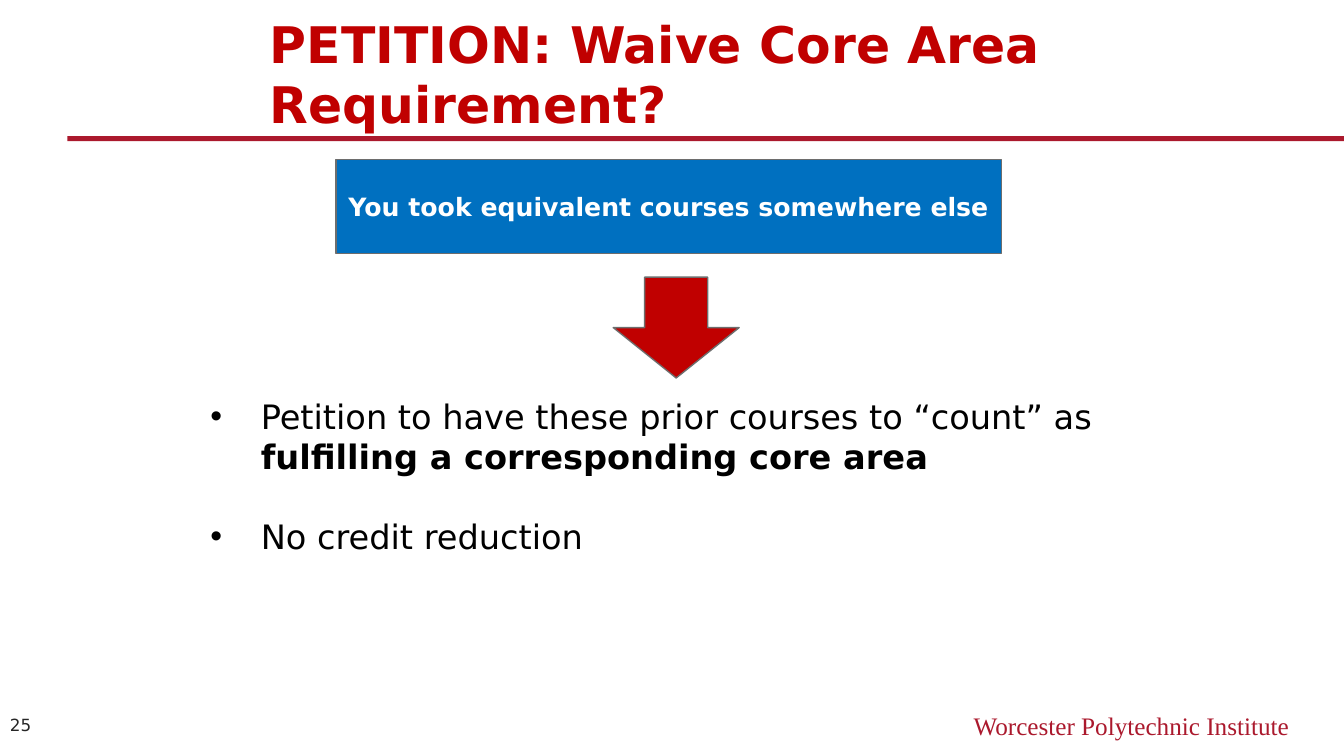
from lxml import etree
from pptx import Presentation
from pptx.dml.color import RGBColor
from pptx.enum.shapes import MSO_SHAPE
from pptx.enum.text import MSO_ANCHOR, PP_ALIGN
from pptx.oxml.ns import qn
from pptx.util import Pt

RECT, ARROW = MSO_SHAPE.RECTANGLE, MSO_SHAPE.DOWN_ARROW
TOP, MIDDLE = MSO_ANCHOR.TOP, MSO_ANCHOR.MIDDLE
LEFT, CENTER, RIGHT = PP_ALIGN.LEFT, PP_ALIGN.CENTER, PP_ALIGN.RIGHT
SANS, SERIF = "DejaVu Sans", "Times New Roman"
RED, CRIMSON, BLUE, GRAY = "C00000", "AB192D", "0070C0", "6D6D6D"
BLACK, WHITE, DARK = "000000", "FFFFFF", "262626"
POINTS = [
    [("Petition to have these prior courses to “count” as ", False),
     ("fulfilling a corresponding core area", True)],
    [("No credit reduction", False)],
]


def color(code):
    """Turn a hex string into a colour."""
    return RGBColor.from_string(code)


def style(font, size, code, bold=False, name=SANS):
    """Set the look of a font."""
    look = {"name": name, "size": Pt(size), "bold": bold}
    for key, value in look.items():
        setattr(font, key, value)
    font.color.rgb = color(code)


def shape(slide, kind, box, fill, edge=None):
    """Draw a filled preset shape in the box."""
    item = slide.shapes.add_shape(kind, *map(Pt, box))
    item.shadow.inherit = False
    item.fill.solid()
    item.fill.fore_color.rgb = color(fill)
    if edge:
        item.line.color.rgb = color(edge)
        item.line.width = Pt(1)
    else:
        item.line.fill.background()
    return item


def write(frame, text, align, anchor, wrap=True, **look):
    """Put one styled paragraph in a text frame."""
    form = {"word_wrap": wrap, "vertical_anchor": anchor}
    for key, value in form.items():
        setattr(frame, key, value)
    para = frame.paragraphs[0]
    para.alignment = align
    run = para.add_run()
    run.text = text
    style(run.font, **look)


def label(slide, box, text, align=LEFT, anchor=TOP, **look):
    """Place a text box with one paragraph."""
    item = slide.shapes.add_textbox(*map(Pt, box))
    write(item.text_frame, text, align, anchor, **look)


def header(slide, box):
    """Place the title and the rule at the foot of the box."""
    left, top, width, height = box
    label(slide, (left + 137.5, top, 620.6, 94.3),
          "PETITION: Waive Core Area Requirement?",
          size=36, code=RED, bold=True)
    shape(slide, RECT, (left, top + height - 3.6, width, 3.6), CRIMSON)


def reason(slide, box):
    """Place the banner with an arrow below it."""
    left, top, width, height = box
    card = shape(slide, RECT, (left, top, width, 67), BLUE, GRAY)
    write(card.text_frame, "You took equivalent courses somewhere else",
          CENTER, MIDDLE, wrap=False, size=18, code=WHITE, bold=True)
    shape(slide, ARROW, (left + 198, top + height - 72, 90, 72), RED, GRAY)


def bullets(slide, box):
    """Place the bulleted points in the box."""
    frame = slide.shapes.add_textbox(*map(Pt, box)).text_frame
    frame.word_wrap = True
    for index, point in enumerate(POINTS):
        para = frame.add_paragraph() if index else frame.paragraphs[0]
        props = para._p.get_or_add_pPr()
        props.set("marL", str(Pt(41)))
        props.set("indent", str(-Pt(36)))
        if index:
            para.space_before = Pt(28)
        etree.SubElement(props, qn("a:buFont"), typeface="Arial")
        etree.SubElement(props, qn("a:buChar"), char="•")
        for text, bold in point:
            run = para.add_run()
            run.text = text
            style(run.font, 24, BLACK, bold)


def footer(slide, box):
    """Place the page number and the school name."""
    left, top, width, height = box
    label(slide, (left, top, 48, height), "25", anchor=MIDDLE,
          size=12, code=DARK)
    label(slide, (left + width - 352, top + 0.7, 352, height),
          "Worcester Polytechnic Institute", RIGHT,
          size=18, code=CRIMSON, name=SERIF)


def main():
    """Build the slide and save it."""
    deck = Presentation()
    deck.slide_width, deck.slide_height = Pt(960), Pt(540)
    slide = deck.slides.add_slide(deck.slide_layouts[6])
    header(slide, (48.2, 5.8, 911.8, 95))
    reason(slide, (240, 114, 475.2, 156))
    bullets(slide, (138.2, 279, 680, 145))
    footer(slide, (0, 503.3, 928, 28.8))
    deck.save("out.pptx")


if __name__ == "__main__":
    main()
